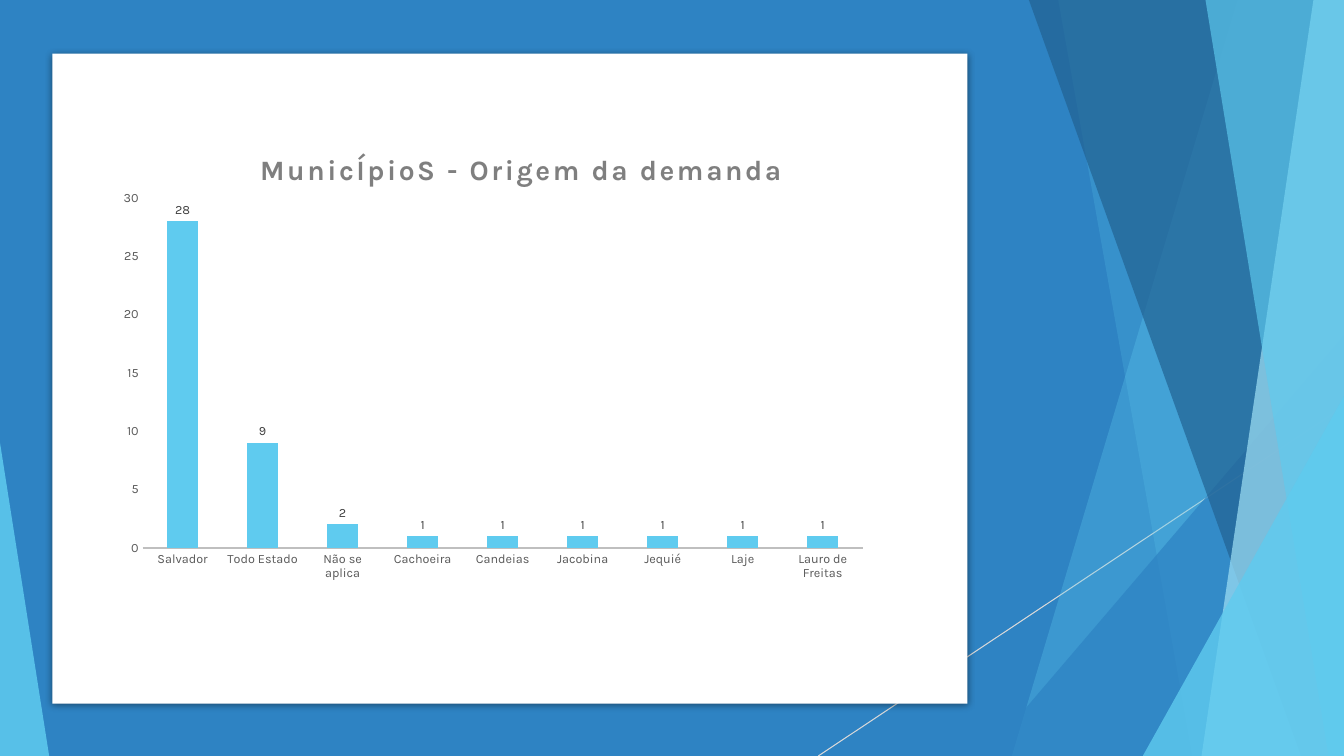
from lxml.etree import SubElement
from pptx import Presentation
from pptx.chart.data import CategoryChartData
from pptx.dml.color import RGBColor
from pptx.enum.chart import XL_CHART_TYPE, XL_LABEL_POSITION, XL_TICK_MARK
from pptx.enum.shapes import MSO_CONNECTOR, MSO_SHAPE
from pptx.oxml import parse_xml
from pptx.oxml.ns import nsdecls, qn
from pptx.util import Cm, Pt

WIDTH, HEIGHT = 33.87, 19.05
FONT = "Karla"

BLUE = RGBColor(0x2E, 0x83, 0xC3)
NAVY = RGBColor(0x22, 0x62, 0x92)
SKY = RGBColor(0x5F, 0xCB, 0xEF)
PALE = RGBColor(0x9F, 0xE0, 0xF5)
WHITE = RGBColor(0xFF, 0xFF, 0xFF)
LINE_GREY = RGBColor(0xD9, 0xD9, 0xD9)
AXIS_GREY = RGBColor(0xBF, 0xBF, 0xBF)
TITLE_GREY = RGBColor(0x7F, 0x7F, 0x7F)
AXIS_TEXT = RGBColor(0x59, 0x59, 0x59)
LABEL_TEXT = RGBColor(0x40, 0x40, 0x40)

DEMAND = {
    "Salvador": 28, "Todo Estado": 9, "Não se aplica": 2,
    "Cachoeira": 1, "Candeias": 1, "Jacobina": 1,
    "Jequié": 1, "Laje": 1, "Lauro de Freitas": 1,
}


class SlideBuilder:
    def __init__(self, slide, font):
        self.s = slide
        self.font = font

    def fill(self, sp, color, opacity=100):
        sp.shadow.inherit = False
        sp.line.fill.background()
        sp.fill.solid()
        sp.fill.fore_color.rgb = color
        if opacity < 100:
            clr = sp.fill._xPr.find(qn("a:solidFill"))[0]
            SubElement(clr, qn("a:alpha"), val=str(opacity * 1000))
        return sp

    def shape(self, kind, left, top, width, height, color, opacity=100):
        sp = self.s.shapes.add_shape(kind, Cm(left), Cm(top), Cm(width), Cm(height))
        return self.fill(sp, color, opacity)

    def triangle(self, left, top, width, apex, color, opacity):
        """Triangle standing on the slide's bottom edge."""
        sp = self.shape(MSO_SHAPE.ISOSCELES_TRIANGLE, left, top, width,
                        HEIGHT - top, color, opacity)
        sp.adjustments[0] = apex

    def facet(self, top_x, bottom_x, color, opacity):
        """Full-height area from a slanted left side to the slide's right edge."""
        fb = self.s.shapes.build_freeform(Cm(top_x), 0)
        fb.add_line_segments([(Cm(WIDTH), 0), (Cm(WIDTH), Cm(HEIGHT)),
                              (Cm(bottom_x), Cm(HEIGHT))], close=True)
        self.fill(fb.convert_to_shape(), color, opacity)

    def line(self, x1, y1, x2, y2, color, width):
        ln = self.s.shapes.add_connector(MSO_CONNECTOR.STRAIGHT, Cm(x1), Cm(y1),
                                         Cm(x2), Cm(y2))
        ln.line.color.rgb = color
        ln.line.width = Pt(width)
        SubElement(ln._element.spPr, qn("a:effectLst"))

    def panel(self, left, top, width, height):
        sp = self.shape(MSO_SHAPE.RECTANGLE, left, top, width, height, WHITE)
        effects = sp._element.spPr.find(qn("a:effectLst"))
        shadow = SubElement(effects, qn("a:outerShdw"), blurRad=str(Pt(5)),
                            dist=str(Pt(1.4)), dir="5400000", rotWithShape="0")
        clr = SubElement(shadow, qn("a:srgbClr"), val="000000")
        SubElement(clr, qn("a:alpha"), val="43000")

    def style(self, font, size, color, bold=False):
        font.name = self.font
        font.size = Pt(size)
        font.bold = bold
        font.color.rgb = color

    def layout(self, **fractions):
        """Manual chart layout, as fractions of the chart's size."""
        target = '<c:layoutTarget val="inner"/>' if "w" in fractions else ""
        modes = "".join(f'<c:{k}Mode val="edge"/>' for k in "xy")
        values = "".join(f'<c:{k} val="{v}"/>' for k, v in fractions.items())
        return parse_xml(f'<c:layout {nsdecls("c")}><c:manualLayout>{target}{modes}'
                         f'{values}</c:manualLayout></c:layout>')

    def chart_title(self, chart, text):
        tf = chart.chart_title.text_frame
        tf.text = text
        r = tf.paragraphs[0].runs[0]
        self.style(r.font, 20, TITLE_GREY, bold=True)
        r._r.get_or_add_rPr().set("spc", "170")
        title = chart.chart_title._element
        for old in title.findall(qn("c:layout")):
            title.remove(old)
        title.find(qn("c:tx")).addnext(self.layout(x=0.19, y=0.04))
        chart.chart_title.include_in_layout = False

    def column_chart(self, left, top, width, height, title, values):
        data = CategoryChartData()
        data.categories = list(values)
        data.add_series("Series 1", list(values.values()))
        chart = self.s.shapes.add_chart(XL_CHART_TYPE.COLUMN_CLUSTERED, Cm(left), Cm(top),
                                        Cm(width), Cm(height), data).chart
        chart.has_legend = False
        chart.font.name = self.font
        chart.font.size = Pt(10)
        self.chart_title(chart, title)

        for axis in (chart.category_axis, chart.value_axis):
            axis.major_tick_mark = axis.minor_tick_mark = XL_TICK_MARK.NONE
            axis.has_major_gridlines = False
            self.style(axis.tick_labels.font, 9, AXIS_TEXT)
        chart.category_axis.format.line.color.rgb = AXIS_GREY
        chart.category_axis.format.line.width = Pt(1.5)
        axis = chart.value_axis
        axis.format.line.fill.background()
        axis.minimum_scale, axis.maximum_scale, axis.major_unit = 0, 30, 5

        plot = chart.plots[0]
        plot.gap_width, plot.overlap = 164, -22
        plot.vary_by_categories = False
        fill = plot.series[0].format.fill
        fill.solid()
        fill.fore_color.rgb = SKY
        plot.has_data_labels = True
        labels = plot.data_labels
        labels.show_value = True
        labels.position = XL_LABEL_POSITION.OUTSIDE_END
        self.style(labels.font, 9, LABEL_TEXT)

        area = chart._chartSpace.chart.plotArea
        for old in area.findall(qn("c:layout")):
            area.remove(old)
        area.insert(0, self.layout(x=0.044, y=0.153, w=0.935, h=0.755))


def main():
    prs = Presentation()
    prs.slide_width, prs.slide_height = Cm(WIDTH), Cm(HEIGHT)
    b = SlideBuilder(prs.slides.add_slide(prs.slide_layouts[6]), FONT)

    b.shape(MSO_SHAPE.RECTANGLE, 0, 0, WIDTH, HEIGHT, BLUE)
    b.line(WIDTH, 10.24, 20.62, HEIGHT, LINE_GREY, 0.75)
    b.facet(31.19, 25.5, SKY, 30)
    b.facet(26.67, 30.05, SKY, 20)
    b.triangle(24.82, 8.46, 9.05, 1, BLUE, 72)
    b.facet(25.93, 32.79, NAVY, 70)
    b.facet(33.1, 30.28, PALE, 70)
    b.facet(30.38, 33.48, SKY, 65)
    b.triangle(28.8, 9.98, 5.07, 1, SKY, 80)
    b.triangle(0, 11.15, 1.24, 0, SKY, 85)

    b.panel(1.32, 1.35, 23.06, 16.38)
    b.column_chart(2.74, 3.2, 19.41, 11.68, "MunicÍpioS - Origem da demanda", DEMAND)

    prs.save("out.pptx")


if __name__ == "__main__":
    main()
